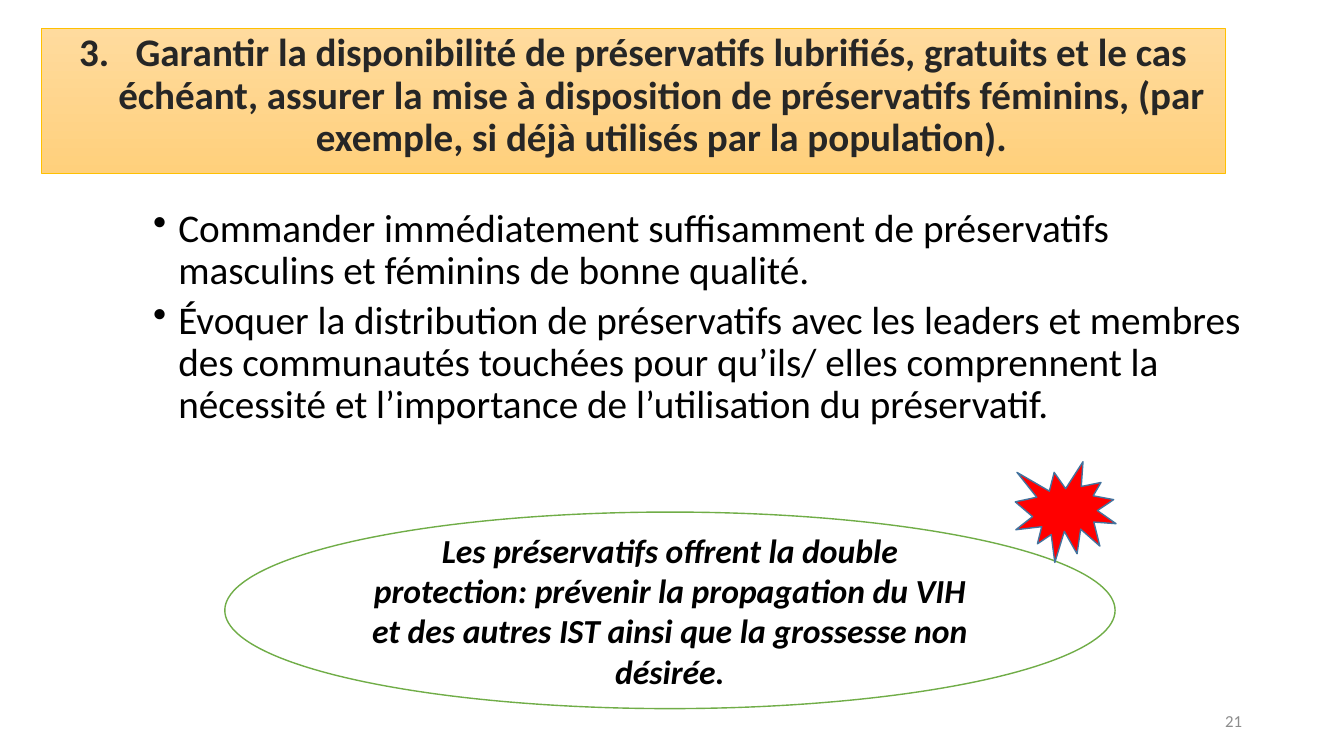
import dataclasses
import typing

import pptx
import pptx.dml.color
import pptx.enum.shapes
import pptx.enum.text
import pptx.oxml.ns
import pptx.util
from lxml import etree

Inches, Pt = pptx.util.Inches, pptx.util.Pt
Align = pptx.enum.text.PP_ALIGN
Anchor = pptx.enum.text.MSO_ANCHOR
Shape = pptx.enum.shapes.MSO_SHAPE

WIDE, HIGH = Inches(13.33), Inches(7.5)
HUES = {
    "black": "000000", "ink": "262626", "gray": "8C8C8C", "white": "FFFFFF",
    "red": "FF0000", "green": "70AD47", "blue": "43739E", "gold": "FFC000",
    "pale": "FFDB9E", "amber": "FFD07C",
}


@dataclasses.dataclass
class Box:
    """Place in percent of the slide's width and height."""
    left: float
    top: float
    width: float
    height: float

    def place(self) -> tuple[int, int, int, int]:
        return (int(WIDE * self.left / 100), int(HIGH * self.top / 100),
                int(WIDE * self.width / 100), int(HIGH * self.height / 100))


@dataclasses.dataclass
class Style:
    size: float
    hue: str = "black"
    bold: bool = False
    slant: bool = False
    align: Align = Align.LEFT
    anchor: Anchor = Anchor.TOP
    lead: float = 1.0
    gap: float = 0


@dataclasses.dataclass
class Mark:
    """List mark: its tag and attributes, with left margin and hang in inches."""
    tag: str
    attrs: dict[str, str]
    margin: float
    hang: float


@dataclasses.dataclass
class Form:
    kind: Shape
    box: Box
    fill: str
    line: str
    text: str = ""


TITLE = ("Garantir la disponibilité de préservatifs lubrifiés, gratuits et le cas "
         "échéant, assurer la mise à disposition de préservatifs féminins, "
         "(par exemple, si déjà utilisés par la population).")
STEPS = [
    "Commander immédiatement suffisamment de préservatifs masculins et féminins "
    "de bonne qualité.",
    "Évoquer la distribution de préservatifs avec les leaders et membres des "
    "communautés touchées pour qu’ils/ elles comprennent la nécessité et "
    "l’importance de l’utilisation du préservatif.",
]
FORMS = [
    Form(Shape.OVAL, Box(16.73, 67.73, 66.24, 26), "white", "green",
         "Les préservatifs offrent la double protection: prévenir la propagation "
         "du VIH et des autres IST ainsi que la grossesse non désirée."),
    Form(Shape.EXPLOSION1, Box(75.54, 61.07, 7.5, 13.33), "red", "blue"),
]
HEAD = Style(27.9, "ink", bold=True, align=Align.CENTER, lead=0.9)
BODY = Style(28, lead=0.9, gap=5)
CLAIM = Style(24, bold=True, slant=True, align=Align.CENTER, anchor=Anchor.MIDDLE)
FOOT = Style(12, "gray", align=Align.RIGHT, anchor=Anchor.MIDDLE)
COUNT = Mark("a:buAutoNum", {"type": "arabicPeriod", "startAt": "3"}, 0.56, 0.56)
DOT = Mark("a:buChar", {"char": "•"}, 0.75, 0.25)


def rgb(hue: str) -> pptx.dml.color.RGBColor:
    return pptx.dml.color.RGBColor.from_string(HUES[hue])


def write(frame: typing.Any, lines: list[str], style: Style,
          mark: Mark | None = None) -> None:
    frame.word_wrap = True
    frame.auto_size = pptx.enum.text.MSO_AUTO_SIZE.NONE
    frame.vertical_anchor = style.anchor
    frame.margin_left = frame.margin_right = Inches(0.1)
    frame.margin_top = frame.margin_bottom = Inches(0.05)
    for i, line in enumerate(lines):
        para = frame.add_paragraph() if i else frame.paragraphs[0]
        if mark:
            props = para._p.get_or_add_pPr()
            props.set("marL", str(Inches(mark.margin)))
            props.set("indent", str(-Inches(mark.hang)))
            etree.SubElement(props, pptx.oxml.ns.qn(mark.tag), mark.attrs)
        para.alignment = style.align
        para.line_spacing = style.lead
        para.space_before = Pt(style.gap if i else 0)
        run = para.add_run()
        run.text = line
        font = run.font
        font.name, font.size = "Calibri", Pt(style.size)
        font.bold, font.italic = style.bold, style.slant
        font.color.rgb = rgb(style.hue)


def banner(slide: typing.Any, box: Box) -> None:
    title = slide.shapes.title
    title.left, title.top, title.width, title.height = box.place()
    title.fill.gradient()
    title.fill.gradient_angle = 270
    for stop, hue in zip(title.fill.gradient_stops, ("pale", "amber")):
        stop.color.rgb = rgb(hue)
    stops = title.fill.gradient_stops
    stops[0].position, stops[1].position = 0, 1
    title.line.color.rgb = rgb("gold")
    title.line.width = Pt(0.5)
    write(title.text_frame, [TITLE], HEAD, COUNT)


def label(slide: typing.Any, box: Box, lines: list[str], style: Style,
          mark: Mark | None = None) -> None:
    write(slide.shapes.add_textbox(*box.place()).text_frame, lines, style, mark)


def draw(slide: typing.Any, form: Form) -> None:
    shape = slide.shapes.add_shape(form.kind, *form.box.place())
    shape.shadow.inherit = False
    shape.fill.solid()
    shape.fill.fore_color.rgb = rgb(form.fill)
    shape.line.color.rgb = rgb(form.line)
    shape.line.width = Pt(1)
    if form.text:
        write(shape.text_frame, [form.text], CLAIM)


def main() -> None:
    deck = pptx.Presentation()
    deck.slide_width, deck.slide_height = WIDE, HIGH
    slide = deck.slides.add_slide(deck.slide_layouts.get_by_name("Title Only"))
    banner(slide, Box(3.08, 3.73, 88.07, 19.2))
    label(slide, Box(6.9, 26.93, 86.27, 39.73), STEPS, BODY, DOT)
    label(slide, Box(70.67, 92.67, 22.5, 5.33), ["21"], FOOT)
    for form in FORMS:
        draw(slide, form)
    deck.save("out.pptx")


if __name__ == "__main__":
    main()
